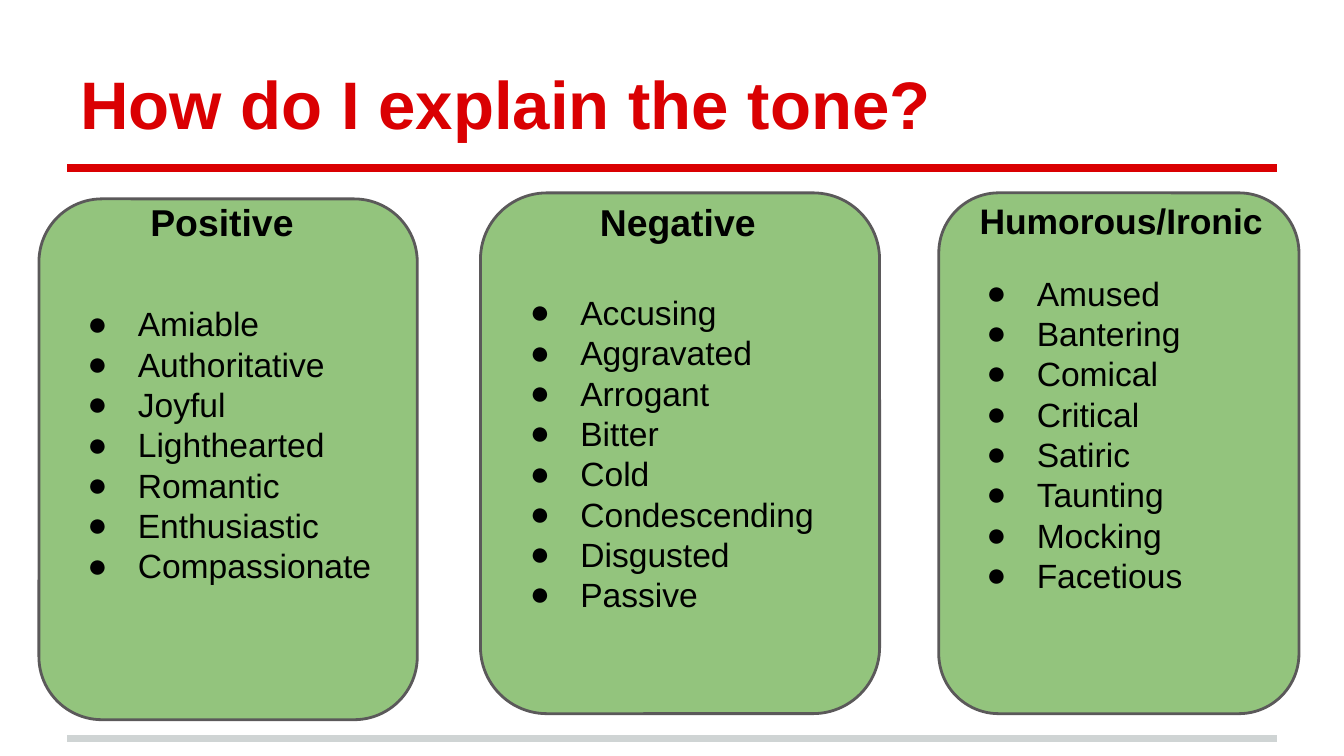
from lxml.etree import SubElement
from pptx import Presentation
from pptx.dml.color import RGBColor
from pptx.enum.shapes import MSO_CONNECTOR, MSO_SHAPE
from pptx.enum.text import MSO_ANCHOR, PP_ALIGN
from pptx.oxml.ns import qn
from pptx.util import Pt

PX = 4572
INSET = 20
RED = RGBColor(0xDA, 0x00, 0x02)
GRAY = RGBColor(0xCF, 0xD4, 0xD4)
GREEN = RGBColor(0x93, 0xC4, 0x7D)
OUTLINE = RGBColor(0x5B, 0x59, 0x5A)
BLACK = RGBColor(0x00, 0x00, 0x00)

CARDS = [
    ((58, 296, 563), 64,
     ["Amiable", "Authoritative", "Joyful", "Lighthearted", "Romantic",
      "Enthusiastic", "Compassionate"]),
    ((715, 287, 594), 20,
     ["Accusing", "Aggravated", "Arrogant", "Bitter", "Cold",
      "Condescending", "Disgusted", "Passive"]),
    ((1397, 287, 536), 78,
     ["Amused", "Bantering", "Comical", "Critical", "Satiric", "Taunting",
      "Mocking", "Facetious"]),
]
HEADINGS = [
    ("Positive", 204, 318, 20),
    ("Negative", 873, 318, 20),
    ("Humorous/Ironic", 1438, 496, 19),
]


def fill_text(shape, lines, size, color, bold, anchor):
    frame = shape.text_frame
    frame.word_wrap = True
    frame.vertical_anchor = anchor
    frame.margin_left = frame.margin_right = INSET * PX
    frame.margin_top = frame.margin_bottom = INSET * PX
    frame.text = "\n".join(lines)
    for paragraph in frame.paragraphs:
        paragraph.alignment = PP_ALIGN.LEFT
        paragraph.font.name = "Arial"
        paragraph.font.size = Pt(size)
        paragraph.font.bold = bold
        paragraph.font.color.rgb = color


def add_text(left, top, width, height, text, size, color, anchor):
    box = slide.shapes.add_textbox(left * PX, top * PX, width * PX, height * PX)
    fill_text(box, [text], size, color, True, anchor)


presentation = Presentation()
presentation.slide_width = 2000 * PX
presentation.slide_height = 1125 * PX
slide = presentation.slides.add_slide(presentation.slide_layouts[6])

for y, color in [(1099, GRAY), (250, RED)]:
    rule = slide.shapes.add_connector(
        MSO_CONNECTOR.STRAIGHT, 100 * PX, y * PX, 1900 * PX, y * PX)
    rule.line.color.rgb = color
    rule.line.width = Pt(4)
    SubElement(rule._element.spPr, qn("a:effectLst"))

add_text(100, 45, 1800, 188, "How do I explain the tone?", 36, RED,
         MSO_ANCHOR.BOTTOM)

for (left, top, width), bottom_inset, words in CARDS:
    card = slide.shapes.add_shape(
        MSO_SHAPE.ROUNDED_RECTANGLE, left * PX, top * PX, width * PX, 775 * PX)
    card.shadow.inherit = False
    card.fill.solid()
    card.fill.fore_color.rgb = GREEN
    card.line.color.rgb = OUTLINE
    card.line.width = Pt(1.5)
    fill_text(card, words, 18, BLACK, False, MSO_ANCHOR.MIDDLE)
    card.text_frame.margin_bottom = bottom_inset * PX
    for paragraph in card.text_frame.paragraphs:
        properties = paragraph._p.get_or_add_pPr()
        properties.set("marL", str(100 * PX))
        properties.set("indent", str(-75 * PX))
        for tag, attributes in [
            ("a:buSzPts", {"val": "1800"}),
            ("a:buFont", {"typeface": "Arial"}),
            ("a:buChar", {"char": "●"}),
        ]:
            bullet = properties.makeelement(qn(tag), attributes)
            properties.insert_element_before(bullet, "a:defRPr")

for text, left, width, size in HEADINGS:
    add_text(left, 276, width, 94, text, size, BLACK, MSO_ANCHOR.TOP)

presentation.save("out.pptx")
